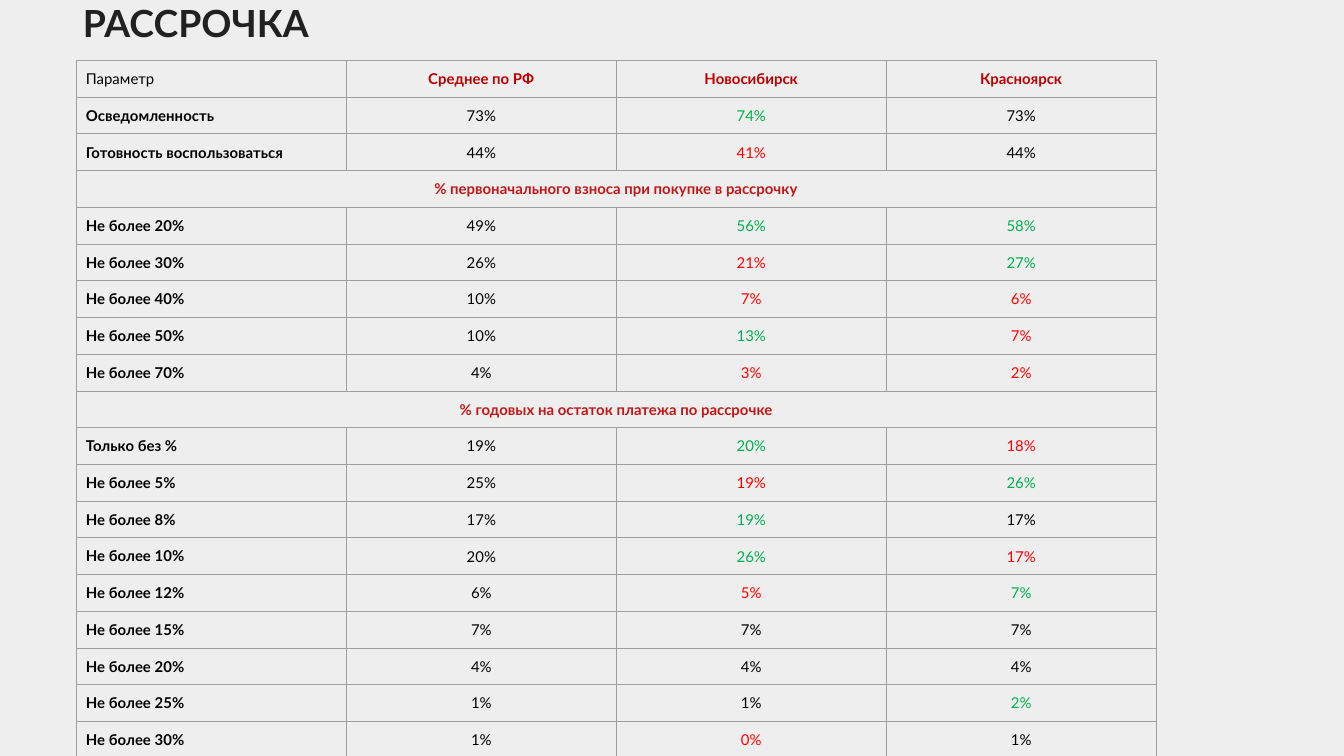
"""Build a slide comparing instalment-plan survey results by city."""
import pptx
import pptx.dml.color
import pptx.enum.text
import pptx.oxml
import pptx.oxml.ns
import pptx.util

Pt = pptx.util.Pt
RGBColor = pptx.dml.color.RGBColor
ALIGN = pptx.enum.text.PP_ALIGN
ANCHOR = pptx.enum.text.MSO_ANCHOR

BACKGROUND = RGBColor(0xEE, 0xEE, 0xEE)
TITLE_COLOR = RGBColor(0x21, 0x21, 0x21)
BLACK = RGBColor(0, 0, 0)
CITY_COLOR = RGBColor(0xC0, 0, 0)
SECTION_COLOR = RGBColor(0xC4, 0x16, 0x16)
ABOVE = RGBColor(0, 0xB0, 0x50)
BELOW = RGBColor(0xFF, 0, 0)
BORDER = RGBColor(0x9E, 0x9E, 0x9E)

FONT = "Lato"
ROW_HEIGHT = 19.6
COLUMN_WIDTH = 144.6
CELL_MARGIN = 5.04

HEADER = ("Параметр", "Среднее по РФ", "Новосибирск", "Красноярск")
ROWS = (
    ("Осведомленность", 73, 74, 73),
    ("Готовность воспользоваться", 44, 41, 44),
    ("% первоначального взноса при покупке в рассрочку",),
    ("Не более 20%", 49, 56, 58),
    ("Не более 30%", 26, 21, 27),
    ("Не более 40%", 10, 7, 6),
    ("Не более 50%", 10, 13, 7),
    ("Не более 70%", 4, 3, 2),
    ("% годовых на остаток платежа по рассрочке",),
    ("Только без %", 19, 20, 18),
    ("Не более 5%", 25, 19, 26),
    ("Не более 8%", 17, 19, 17),
    ("Не более 10%", 20, 26, 17),
    ("Не более 12%", 6, 5, 7),
    ("Не более 15%", 7, 7, 7),
    ("Не более 20%", 4, 4, 4),
    ("Не более 25%", 1, 1, 2),
    ("Не более 30%", 1, 0, 1),
)


def style_paragraph(para, size, color, bold, align):
    """Set the font and alignment of a paragraph."""
    para.alignment = align
    para.font.name = FONT
    para.font.size = Pt(size)
    para.font.bold = bold
    para.font.color.rgb = color


def add_title(page, text):
    """Place and format the title placeholder."""
    title = page.shapes.title
    title.left, title.top = Pt(32.4), Pt(-7.2)
    title.width, title.height = Pt(656), Pt(36.7)
    frame = title.text_frame
    frame.margin_left = frame.margin_right = Pt(7.2)
    frame.margin_top = frame.margin_bottom = Pt(7.2)
    frame.vertical_anchor = ANCHOR.TOP
    frame.auto_size = pptx.enum.text.MSO_AUTO_SIZE.NONE
    frame.text = text
    style_paragraph(frame.paragraphs[0], 20, TITLE_COLOR, True, ALIGN.LEFT)


def format_cell(cell):
    """Give a cell its margins, thin borders and no fill."""
    cell.margin_left = cell.margin_right = Pt(CELL_MARGIN)
    cell.margin_top = cell.margin_bottom = Pt(CELL_MARGIN)
    properties = cell._tc.get_or_add_tcPr()
    for side in ("lnL", "lnR", "lnT", "lnB"):
        properties.append(pptx.oxml.parse_xml(
            f'<a:{side} {pptx.oxml.ns.nsdecls("a")} w="{Pt(0.5)}">'
            f'<a:solidFill><a:srgbClr val="{BORDER}"/></a:solidFill></a:{side}>'))
    cell.fill.background()


def write_cell(cell, text, color=BLACK, bold=False, align=ALIGN.CENTER, anchor=ANCHOR.MIDDLE):
    """Write formatted text into a cell."""
    cell.text = text
    cell.vertical_anchor = anchor
    style_paragraph(cell.text_frame.paragraphs[0], 8, color, bold, align)


def comparison_color(value, average):
    """Return the colour that marks a value against the average."""
    if value == average:
        return BLACK
    return ABOVE if value > average else BELOW


def write_label(cell, text, bold=True):
    """Write a row label at the left of the table."""
    write_cell(cell, text, bold=bold, align=ALIGN.LEFT, anchor=ANCHOR.TOP)


def add_results_table(page):
    """Add the table of survey results."""
    row_count, column_count = len(ROWS) + 1, len(HEADER)
    table = page.shapes.add_table(
        row_count, column_count, Pt(41), Pt(32.4),
        Pt(COLUMN_WIDTH * column_count), Pt(ROW_HEIGHT * row_count)).table
    table.first_row = table.horz_banding = False
    for column in table.columns:
        column.width = Pt(COLUMN_WIDTH)
    for row in table.rows:
        row.height = Pt(ROW_HEIGHT)
    for cell in table.iter_cells():
        format_cell(cell)
        write_cell(cell, "")

    write_label(table.cell(0, 0), HEADER[0], bold=False)
    for column, city in enumerate(HEADER[1:], 1):
        write_cell(table.cell(0, column), city, CITY_COLOR, True)
    for row, (label, *values) in enumerate(ROWS, 1):
        first = table.cell(row, 0)
        if not values:
            first.merge(table.cell(row, column_count - 1))
            write_cell(first, label, SECTION_COLOR, True, anchor=ANCHOR.TOP)
            continue
        write_label(first, label)
        for column, value in enumerate(values, 1):
            write_cell(table.cell(row, column), f"{value}%", comparison_color(value, values[0]))


def main():
    """Build and save the deck."""
    deck = pptx.Presentation()
    deck.slide_width, deck.slide_height = Pt(720), Pt(405)
    page = deck.slides.add_slide(deck.slide_layouts[5])
    page.background.fill.solid()
    page.background.fill.fore_color.rgb = BACKGROUND
    add_title(page, " РАССРОЧКА")
    add_results_table(page)
    deck.save("out.pptx")


if __name__ == "__main__":
    main()
